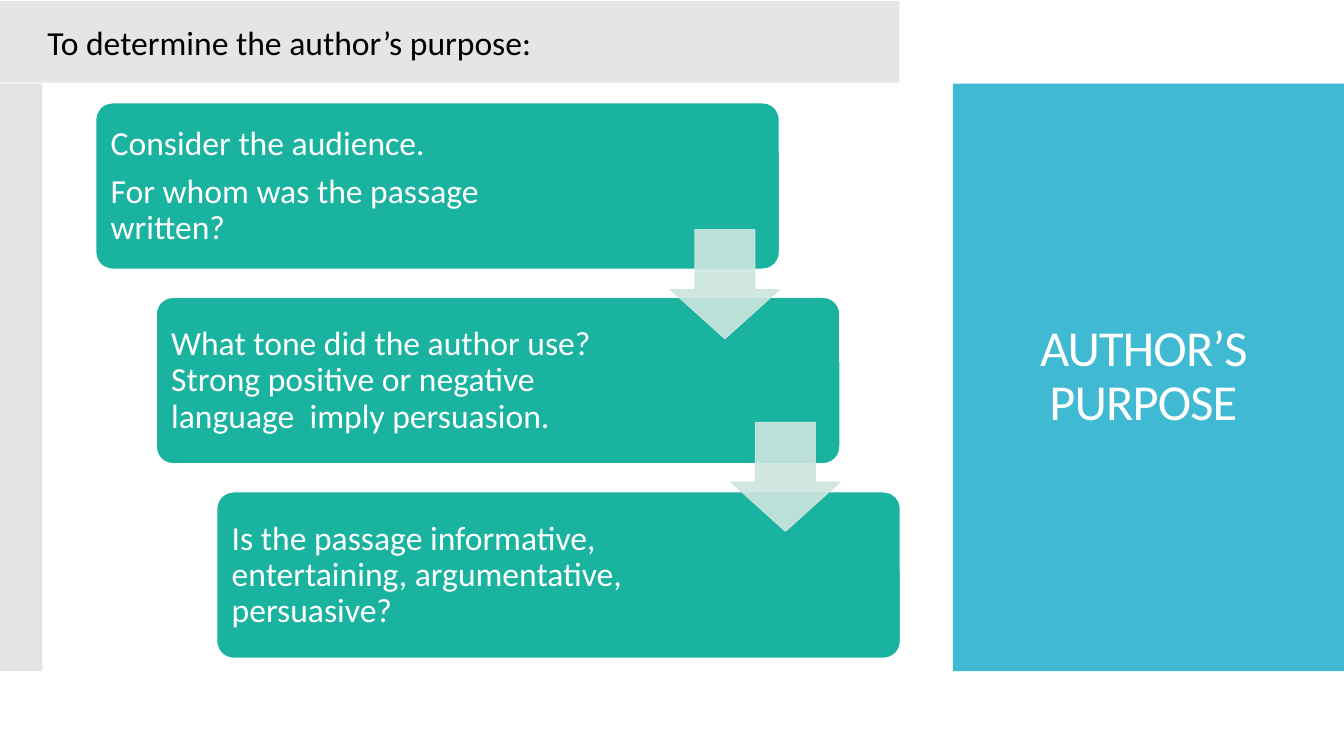
from dataclasses import dataclass
from typing import Optional

from lxml.etree import SubElement
from pptx import Presentation
from pptx.dml.color import RGBColor
from pptx.enum.shapes import MSO_SHAPE as Preset
from pptx.enum.text import MSO_ANCHOR as Anchor, PP_ALIGN as Align
from pptx.oxml.ns import qn
from pptx.util import Inches, Pt


@dataclass(frozen=True)
class Theme:
    font: str = "Calibri"
    blue: str = "40BAD2"
    green: str = "1AB39F"
    mint: str = "CDE5DF"
    gray: str = "C8C8C8"
    header_gray: str = "E5E5E5"
    white: str = "FFFFFF"
    black: str = "000000"
    body_size: float = 24
    title_size: float = 36
    outline: float = 0.85


@dataclass(frozen=True)
class Box:
    left: float
    top: float
    width: float
    height: float

    def lengths(self) -> tuple:
        return tuple(Inches(n) for n in (self.left, self.top, self.width, self.height))


@dataclass(frozen=True)
class Block:
    preset: Preset
    box: Box
    fill: str
    line: Optional[str] = None
    opacity: int = 100
    adjustments: tuple = ()


@dataclass(frozen=True)
class Text:
    paragraphs: tuple
    color: str
    size: float
    align: Align = Align.LEFT
    line_spacing: float = 0.9
    space_after: float = 0
    tracking: int = 0
    insets: tuple = (0.1, 0.1, 0.1, 0.1)


THEME = Theme()

STEPS = (
    ("Consider the audience.", "For whom was the passage written?"),
    ("What tone did the author use? Strong positive or negative language  imply persuasion.",),
    ("Is the passage informative, entertaining, argumentative, persuasive?",),
)
STEP_RIGHT, CARD_DOWN, ARROW_DOWN = 0.6, 1.93, 1.91


def set_attributes(target, values: dict) -> None:
    for name, value in values.items():
        setattr(target, name, value)


def add_block(slide, block: Block):
    shape = slide.shapes.add_shape(block.preset, *block.box.lengths())
    shape.shadow.inherit = False
    shape.fill.solid()
    shape.fill.fore_color.rgb = RGBColor.from_string(block.fill)
    if block.line:
        shape.line.color.rgb = RGBColor.from_string(block.line)
        shape.line.width = Pt(THEME.outline)
    else:
        shape.line.fill.background()
    for index, value in enumerate(block.adjustments):
        shape.adjustments[index] = value
    if block.opacity < 100:
        for color in shape.element.spPr.iter(qn("a:srgbClr")):
            SubElement(color, qn("a:alpha")).set("val", str(block.opacity * 1000))
    return shape


def write_text(shape, text: Text) -> None:
    frame = shape.text_frame
    margins = ("margin_left", "margin_top", "margin_right", "margin_bottom")
    set_attributes(frame, {name: Inches(n) for name, n in zip(margins, text.insets)})
    set_attributes(frame, {"word_wrap": True, "vertical_anchor": Anchor.MIDDLE})
    for index, words in enumerate(text.paragraphs):
        paragraph = frame.add_paragraph() if index else frame.paragraphs[0]
        set_attributes(paragraph, {
            "alignment": text.align,
            "line_spacing": text.line_spacing,
            "space_after": Pt(text.space_after),
        })
        run = paragraph.add_run()
        run.text = words
        set_attributes(run.font, {"name": THEME.font, "size": Pt(text.size)})
        run.font.color.rgb = RGBColor.from_string(text.color)
        if text.tracking:
            run.font._element.set("spc", str(text.tracking))


def add_text(slide, box: Box, text: Text) -> None:
    write_text(slide.shapes.add_textbox(*box.lengths()), text)


def add_title_panel(slide) -> None:
    add_block(slide, Block(Preset.RECTANGLE, Box(9.45, 0.83, 3.88, 5.83), THEME.blue))
    add_text(slide, Box(9.73, 1.23, 3.22, 5.03), Text(
        ("AUTHOR’S PURPOSE",), THEME.white, THEME.title_size,
        align=Align.CENTER, tracking=-60, insets=(0.1, 0.05, 0.1, 0.05)))
    add_block(slide, Block(
        Preset.RECTANGLE, Box(0, 0.83, 0.42, 5.83), THEME.gray, opacity=50))


def add_staircase(slide) -> None:
    """Draw the stepped cards, then the arrows that lead from each to the next."""
    for index, paragraphs in enumerate(STEPS):
        left, top = 0.95 + index * STEP_RIGHT, 1.02 + index * CARD_DOWN
        add_block(slide, Block(
            Preset.ROUNDED_RECTANGLE, Box(left, top, 6.78, 1.65),
            THEME.green, THEME.white, adjustments=(0.1,)))
        add_text(slide, Box(left + 0.05, top + 0.05, 5, 1.56), Text(
            paragraphs, THEME.white, THEME.body_size,
            space_after=0.35 * THEME.body_size))
    for index in range(len(STEPS) - 1):
        box = Box(6.65 + index * STEP_RIGHT, 2.28 + index * ARROW_DOWN, 1.08, 1.08)
        add_block(slide, Block(
            Preset.DOWN_ARROW, box, THEME.mint, THEME.mint, 90, (0.55, 0.45)))


def add_header(slide) -> None:
    header = add_block(slide, Block(
        Preset.RECTANGLE, Box(0, 0.01, 8.92, 0.81), THEME.header_gray))
    write_text(header, Text(
        ("To determine the author’s purpose:",), THEME.black, THEME.body_size,
        line_spacing=1.0, insets=(0.47, 0.05, 0.1, 0.05)))


def main() -> None:
    presentation = Presentation()
    set_attributes(presentation, {"slide_width": Inches(13.33), "slide_height": Inches(7.5)})
    slide = presentation.slides.add_slide(presentation.slide_layouts[6])
    slide.background.fill.solid()
    slide.background.fill.fore_color.rgb = RGBColor.from_string(THEME.white)
    add_title_panel(slide)
    add_staircase(slide)
    add_header(slide)
    presentation.save("out.pptx")


if __name__ == "__main__":
    main()
